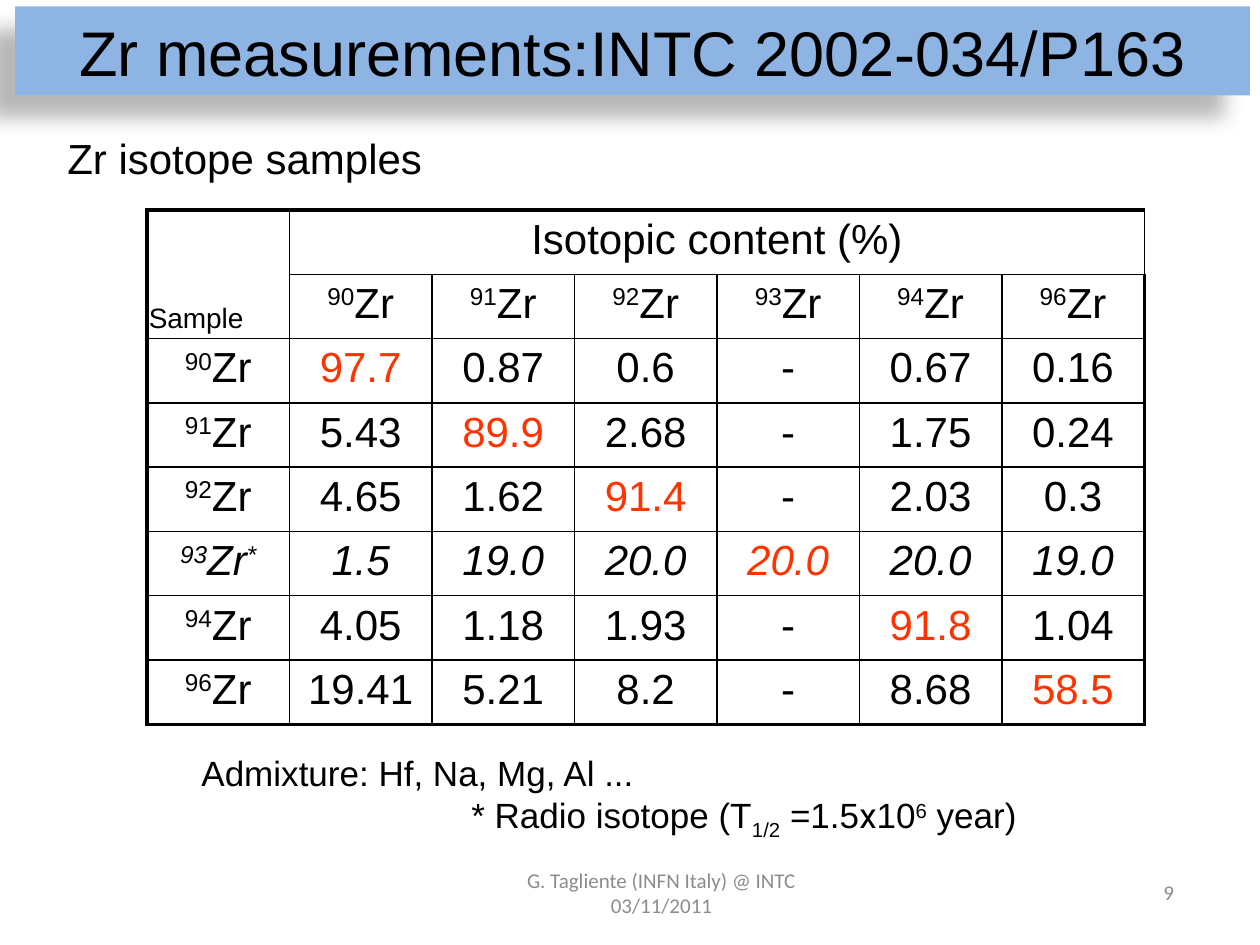
"""Build a slide with the isotopic content of the Zr samples."""
import dataclasses
import typing

import lxml.etree
import pptx
import pptx.dml.color
import pptx.enum.text
import pptx.oxml.ns
import pptx.util

ALIGN = pptx.enum.text.PP_ALIGN
ANCHOR = pptx.enum.text.MSO_ANCHOR
UNIT = pptx.util.Inches(1) / 12


@dataclasses.dataclass(frozen=True)
class Theme:
    ink: str = "000000"
    accent: str = "FF3300"
    banner: str = "8EB4E3"
    muted: str = "8C8C8C"
    font: str = "Arial"
    footer_font: str = "Calibri"
    sign_font: str = "Roboto"
    title_size: float = 36
    body_size: float = 24
    note_size: float = 20
    label_size: float = 16
    footer_size: float = 12
    thin: float = 1
    thick: float = 2.25


THEME = Theme()


class Area(typing.NamedTuple):
    """A rectangle on a grid of 120 columns by 90 rows."""
    column: float
    row: float
    columns: float
    rows: float


class Span(typing.NamedTuple):
    text: str
    baseline: int = 0
    font: typing.Optional[str] = None


class Style(typing.NamedTuple):
    size: float
    color: str = THEME.ink
    align: ALIGN = ALIGN.LEFT
    font: str = THEME.font
    italic: bool = False


class Sample(typing.NamedTuple):
    mass: str
    contents: tuple[str, ...]
    radioactive: bool = False


class Label(typing.NamedTuple):
    area: Area
    text: str
    style: Style
    anchor: ANCHOR = ANCHOR.TOP
    wrap: bool = True


ISOTOPES = ("90", "91", "92", "93", "94", "96")
SAMPLES = (
    Sample("90", ("97.7", "0.87", "0.6", "-", "0.67", "0.16")),
    Sample("91", ("5.43", "89.9", "2.68", "-", "1.75", "0.24")),
    Sample("92", ("4.65", "1.62", "91.4", "-", "2.03", "0.3")),
    Sample("93", ("1.5", "19.0", "20.0", "20.0", "20.0", "19.0"), True),
    Sample("94", ("4.05", "1.18", "1.93", "-", "91.8", "1.04")),
    Sample("96", ("19.41", "5.21", "8.2", "-", "8.68", "58.5")),
)
LABELS = (
    Label(Area(5, 12, 36.6, 6), "Zr isotope samples",
          Style(THEME.body_size, align=ALIGN.CENTER), wrap=False),
    Label(Area(13, 28, 13, 4.4), "Sample", Style(THEME.label_size)),
    Label(Area(45, 82, 36, 6), "G. Tagliente (INFN Italy) @ INTC 03/11/2011",
          Style(THEME.footer_size, THEME.muted, ALIGN.CENTER, THEME.footer_font), ANCHOR.MIDDLE),
    Label(Area(88, 82, 25, 6), "9",
          Style(THEME.footer_size, THEME.muted, ALIGN.RIGHT, THEME.footer_font), ANCHOR.MIDDLE),
)
HALF_LIFE = (
    Span("* Radio isotope (T"), Span("1/2", -25), Span(" =1.5"),
    Span("x", font=THEME.sign_font), Span("10"), Span("6", 30), Span(" year)"),
)


def place(area: Area) -> tuple[int, ...]:
    return tuple(round(value * UNIT) for value in area)


def rgb(color: str) -> pptx.dml.color.RGBColor:
    return pptx.dml.color.RGBColor.from_string(color)


def write(para, spans: typing.Iterable[Span], style: Style) -> None:
    para.alignment = style.align
    para.font.size = pptx.util.Pt(style.size)
    para.font.name = style.font
    para.font.italic = style.italic
    para.font.color.rgb = rgb(style.color)
    for span in spans:
        run = para.add_run()
        run.text = span.text
        if span.font:
            run.font.name = span.font
        if span.baseline:
            run._r.get_or_add_rPr().set("baseline", str(span.baseline * 1000))


def add_box(page, area: Area, anchor: ANCHOR = ANCHOR.TOP, wrap: bool = True):
    frame = page.shapes.add_textbox(*place(area)).text_frame
    frame.word_wrap = wrap
    frame.vertical_anchor = anchor
    return frame


def add_node(parent, tag: str, **attributes: typing.Any):
    node = lxml.etree.SubElement(parent, pptx.oxml.ns.qn(tag))
    for name, value in attributes.items():
        node.set(name, str(value))
    return node


def draw_title(page) -> None:
    title = page.shapes.title
    title.left, title.top, title.width, title.height = place(Area(1.44, 0.6, 117.6, 8.5))
    title.fill.solid()
    title.fill.fore_color.rgb = rgb(THEME.banner)
    title.line.fill.background()
    effects = add_node(title._element.spPr, "a:effectLst")
    shadow = add_node(effects, "a:outerShdw", blurRad=pptx.util.Pt(11.8),
                      dist=pptx.util.Pt(19.7), dir=141 * 60000, rotWithShape=0)
    add_node(add_node(shadow, "a:srgbClr", val=THEME.ink), "a:alpha", val=28000)
    frame = title.text_frame
    frame.auto_size = pptx.enum.text.MSO_AUTO_SIZE.NONE
    frame.vertical_anchor = ANCHOR.MIDDLE
    write(frame.paragraphs[0], [Span("Zr measurements:INTC 2002-034/P163")],
          Style(THEME.title_size, align=ALIGN.CENTER))


def format_cell(cell, outer: dict[str, bool]) -> None:
    properties = cell._tc.get_or_add_tcPr()
    for side in "LRTB":
        width = pptx.util.Pt(THEME.thick if outer[side] else THEME.thin)
        line = add_node(properties, f"a:ln{side}", w=width)
        add_node(add_node(line, "a:solidFill"), "a:srgbClr", val=THEME.ink)
    cell.fill.background()


def zirconium(mass: str, radioactive: bool = False) -> list[Span]:
    mark = [Span("*", 30)] if radioactive else []
    return [Span(mass, 30), Span("Zr"), *mark]


def draw_table(page) -> None:
    rows, columns = len(SAMPLES) + 2, len(ISOTOPES) + 1
    area = Area(14, 20, 95, 49)
    table = page.shapes.add_table(rows, columns, *place(area)).table
    table.first_row = table.horz_banding = False
    for row in range(rows):
        for column in range(columns):
            format_cell(table.cell(row, column), {
                "L": column == 0, "R": column == columns - 1,
                "T": row == 0, "B": row == rows - 1})
    table.cell(0, 0).merge(table.cell(1, 0))
    table.cell(0, 1).merge(table.cell(0, columns - 1))
    plain = Style(THEME.body_size, align=ALIGN.CENTER)

    def fill_cell(row: int, column: int, spans: list[Span], style: Style = plain) -> None:
        write(table.cell(row, column).text_frame.paragraphs[0], spans, style)

    fill_cell(0, 1, [Span("Isotopic content (%)")])
    for column, mass in enumerate(ISOTOPES, 1):
        fill_cell(1, column, zirconium(mass))
    for row, sample in enumerate(SAMPLES, 2):
        style = plain._replace(italic=sample.radioactive)
        fill_cell(row, 0, zirconium(sample.mass, sample.radioactive), style)
        for column, (mass, content) in enumerate(zip(ISOTOPES, sample.contents), 1):
            color = THEME.accent if mass == sample.mass else THEME.ink
            fill_cell(row, column, [Span(content)], style._replace(color=color))


def main() -> None:
    deck = pptx.Presentation()
    deck.slide_width, deck.slide_height = place(Area(0, 0, 120, 90))[2:]
    page = deck.slides.add_slide(deck.slide_layouts.get_by_name("Title Only"))
    draw_title(page)
    draw_table(page)
    for label in LABELS:
        frame = add_box(page, label.area, label.anchor, label.wrap)
        write(frame.paragraphs[0], [Span(label.text)], label.style)
    notes = add_box(page, Area(18, 71, 80, 9.3))
    style = Style(THEME.note_size)
    write(notes.paragraphs[0], [Span("Admixture: Hf, Na, Mg, Al ...")], style)
    write(notes.add_paragraph(), HALF_LIFE, style._replace(align=ALIGN.RIGHT))
    deck.save("out.pptx")


if __name__ == "__main__":
    main()
